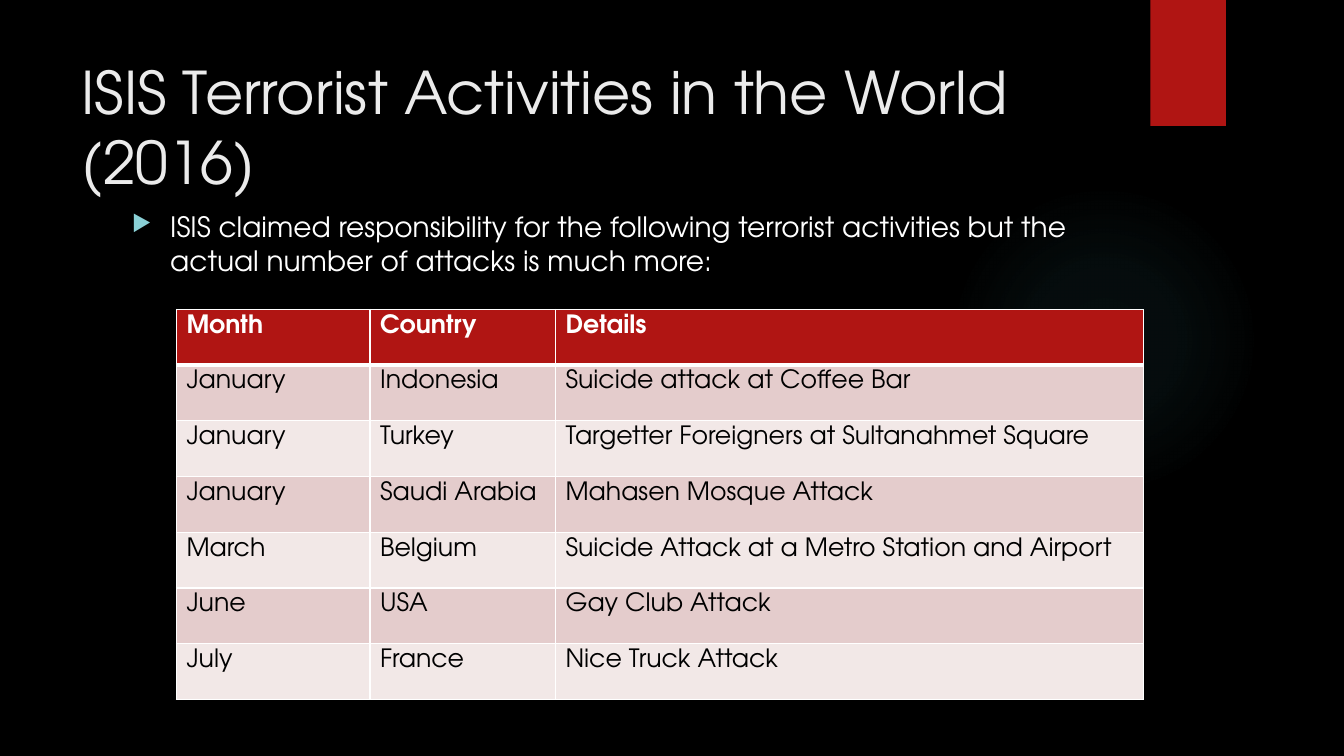
from dataclasses import dataclass

from pptx import Presentation
from pptx.dml.color import RGBColor
from pptx.enum.shapes import MSO_SHAPE
from pptx.oxml import parse_xml
from pptx.oxml.ns import nsdecls
from pptx.util import Inches, Pt

FONT = "TeX Gyre Adventor"
BLACK = RGBColor(0x00, 0x00, 0x00)
WHITE = RGBColor(0xFF, 0xFF, 0xFF)
PALE = RGBColor(0xEB, 0xEB, 0xEB)
RED = RGBColor(0xB0, 0x15, 0x13)
ROSE = RGBColor(0xE4, 0xCC, 0xCC)
BLUSH = RGBColor(0xF2, 0xE8, 0xE7)
TEAL = RGBColor(0x50, 0xB9, 0xC1)
AQUA = RGBColor(0x8A, 0xD0, 0xD6)


@dataclass
class Box:
    left: float
    top: float
    width: float
    height: float

    def place(self) -> tuple:
        return tuple(Inches(n) for n in (self.left, self.top, self.width, self.height))


@dataclass
class Style:
    size: float
    color: RGBColor
    bold: bool = False


@dataclass
class Attack:
    month: str
    country: str
    details: str

    def cells(self) -> tuple:
        return self.month, self.country, self.details


HEADER = Attack("Month", "Country", "Details")
ATTACKS = [
    Attack("January", "Indonesia", "Suicide attack at Coffee Bar"),
    Attack("January", "Turkey", "Targetter Foreigners at Sultanahmet Square"),
    Attack("January", "Saudi Arabia", "Mahasen Mosque Attack"),
    Attack("March", "Belgium", "Suicide Attack at a Metro Station and Airport"),
    Attack("June", "USA", "Gay Club Attack"),
    Attack("July", "France", "Nice Truck Attack"),
]
WIDTHS = [1.92, 1.84, 5.83]
GLOW = [(0, 7), (36, 6), (69, 0)]


def add_run(para, text: str, style: Style) -> None:
    run = para.add_run()
    run.text = text
    run.font.name = FONT
    run.font.size = Pt(style.size)
    run.font.bold = style.bold
    run.font.color.rgb = style.color


def add_shape(slide, kind: MSO_SHAPE, box: Box, color: RGBColor):
    shape = slide.shapes.add_shape(kind, *box.place())
    shape.shadow.inherit = False
    shape.fill.solid()
    shape.fill.fore_color.rgb = color
    shape.line.fill.background()
    return shape


def add_glow(slide, box: Box) -> None:
    shape = add_shape(slide, MSO_SHAPE.OVAL, box, TEAL)
    stops = "".join(
        f'<a:gs pos="{pos * 1000}"><a:srgbClr val="{TEAL}">'
        f'<a:alpha val="{alpha * 1000}"/></a:srgbClr></a:gs>'
        for pos, alpha in GLOW
    )
    fade = parse_xml(
        f'<a:gradFill {nsdecls("a")}><a:gsLst>{stops}</a:gsLst><a:path path="circle">'
        '<a:fillToRect l="50000" t="50000" r="50000" b="50000"/></a:path></a:gradFill>'
    )
    props = shape.element.spPr
    solid = props.find("{*}solidFill")
    props.replace(solid, fade)


def add_text(slide, box: Box, text: str, style: Style):
    frame = slide.shapes.add_textbox(*box.place()).text_frame
    frame.word_wrap = True
    para = frame.paragraphs[0]
    add_run(para, text, style)
    return para


def add_bullet(para) -> None:
    props = para._p.get_or_add_pPr()
    props.set("marL", str(Inches(0.38)))
    props.set("indent", str(Inches(-0.38)))
    for part in (
        f'<a:buClr {nsdecls("a")}><a:srgbClr val="{AQUA}"/></a:buClr>',
        f'<a:buSzPct {nsdecls("a")} val="80000"/>',
        f'<a:buChar {nsdecls("a")} char="▶"/>',
    ):
        props.append(parse_xml(part))


def add_edges(cell, top: float, base: float) -> None:
    props = cell._tc.get_or_add_tcPr()
    edges = [("lnL", 1), ("lnR", 1), ("lnT", top), ("lnB", base)]
    for spot, (name, width) in enumerate(edges):
        line = parse_xml(
            f'<a:{name} {nsdecls("a")} w="{Pt(width)}"><a:solidFill>'
            f'<a:srgbClr val="{WHITE}"/></a:solidFill></a:{name}>'
        )
        props.insert(spot, line)


def add_grid(slide, box: Box) -> None:
    rows = [HEADER, *ATTACKS]
    table = slide.shapes.add_table(len(rows), len(WIDTHS), *box.place()).table
    for col, width in zip(table.columns, WIDTHS):
        col.width = Inches(width)
    for i, attack in enumerate(rows):
        head = i == 0
        fill = RED if head else (BLUSH, ROSE)[i % 2]
        style = Style(18, WHITE if head else BLACK, head)
        for j, text in enumerate(attack.cells()):
            cell = table.cell(i, j)
            cell.fill.solid()
            cell.fill.fore_color.rgb = fill
            add_edges(cell, 3 if i == 1 else 1, 3 if head else 1)
            add_run(cell.text_frame.paragraphs[0], text, style)


def main() -> None:
    deck = Presentation()
    deck.slide_width = Inches(13.33)
    deck.slide_height = Inches(7.5)
    slide = deck.slides.add_slide(deck.slide_layouts[6])
    slide.background.fill.solid()
    slide.background.fill.fore_color.rgb = BLACK

    add_glow(slide, Box(9.41, 1.83, 3.08, 3.08))
    add_shape(slide, MSO_SHAPE.RECTANGLE, Box(11.41, 0, 0.75, 1.25), RED)
    add_text(
        slide,
        Box(0.71, 0.5, 10.29, 1.53),
        "ISIS Terrorist Activities in the World (2016)",
        Style(42, PALE),
    )
    claim = add_text(
        slide,
        Box(1.21, 2.03, 9.78, 4.59),
        "ISIS claimed responsibility for the following terrorist activities "
        "but the actual number of attacks is much more:",
        Style(20, WHITE),
    )
    add_bullet(claim)
    add_grid(slide, Box(1.75, 3.07, 9.59, 3.87))
    deck.save("out.pptx")


if __name__ == "__main__":
    main()
